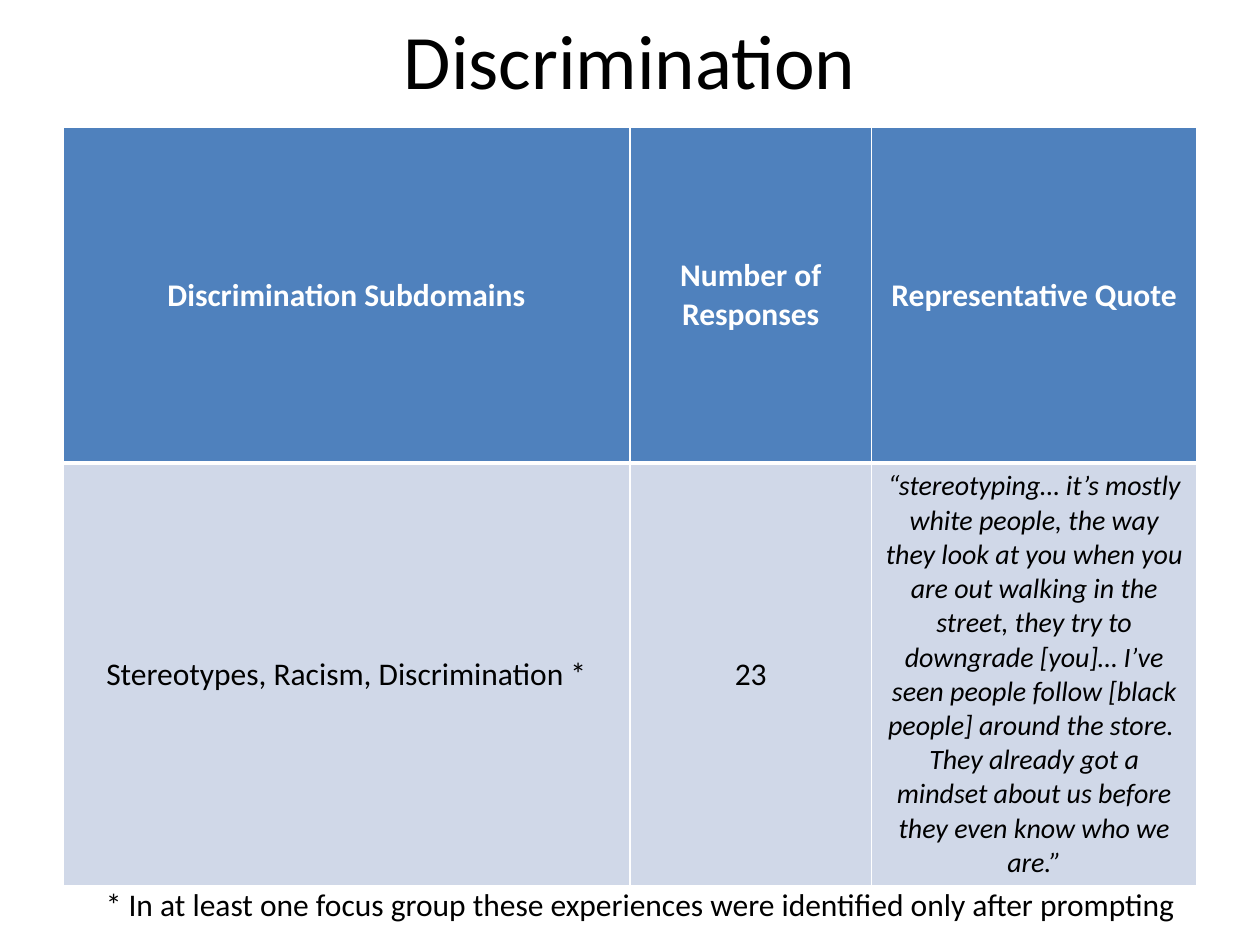
from dataclasses import dataclass

from lxml.etree import SubElement
from pptx import Presentation
from pptx.dml.color import RGBColor
from pptx.enum.text import MSO_ANCHOR as Anchor, MSO_AUTO_SIZE as AutoSize, PP_ALIGN as Align
from pptx.oxml.ns import qn
from pptx.util import Pt


@dataclass(frozen=True)
class Theme:
    """Colours, font and type sizes of the slide."""
    font: str = "Calibri"
    ink: str = "000000"
    paper: str = "FFFFFF"
    header: str = "4F81BD"
    band: str = "D0D8E8"
    title_size: float = 44
    body_size: float = 18
    quote_size: float = 16
    rule: float = 1
    header_rule: float = 3


THEME = Theme()
HEADINGS = ["Discrimination Subdomains", "Number of Responses", "Representative Quote"]
QUOTE = (
    "“stereotyping… it’s mostly white people, the way they look at you when you are out "
    "walking in the street, they try to downgrade [you]… I’ve seen people follow [black people] "
    "around the store.  They already got a mindset about us before they even know who we are.”"
)
RESPONSES = ["Stereotypes, Racism, Discrimination *", "23", QUOTE]
FOOTNOTE = "* In at least one focus group these experiences were identified only after prompting"


def write(frame, text, size=THEME.body_size, color=THEME.ink, align=Align.CENTER,
          bold=False, italic=False):
    """Put one formatted paragraph into a text frame."""
    frame.word_wrap = True
    paragraph = frame.paragraphs[0]
    paragraph.alignment = align
    run = paragraph.add_run()
    run.text = text
    font = run.font
    font.name, font.size, font.bold, font.italic = THEME.font, Pt(size), bold, italic
    font.color.rgb = RGBColor.from_string(color)


def place(shape, box):
    """Move and size a shape to a box given in points."""
    shape.left, shape.top, shape.width, shape.height = map(Pt, box)


def rule_cell(cell, top, bottom):
    """Draw the white rules around a table cell."""
    properties = cell._tc.get_or_add_tcPr()
    edges = {"lnL": THEME.rule, "lnR": THEME.rule, "lnT": top, "lnB": bottom}
    for position, (edge, weight) in enumerate(edges.items()):
        line = SubElement(properties, qn(f"a:{edge}"), w=str(Pt(weight)))
        fill = SubElement(line, qn("a:solidFill"))
        SubElement(fill, qn("a:srgbClr"), val=THEME.paper)
        properties.insert(position, line)


def fill_row(row, texts, formats, fill, top, bottom):
    """Write, colour and rule the cells of one table row."""
    for cell, text, text_format in zip(row.cells, texts, formats):
        write(cell.text_frame, text, **text_format)
        cell.vertical_anchor = Anchor.MIDDLE
        cell.fill.solid()
        cell.fill.fore_color.rgb = RGBColor.from_string(fill)
        rule_cell(cell, top, bottom)


def add_title(slide, box):
    """Place the slide title."""
    title = slide.shapes.title
    place(title, box)
    title.text_frame.vertical_anchor = Anchor.MIDDLE
    write(title.text_frame, "Discrimination", size=THEME.title_size)


def add_responses(slide, box):
    """Place the table of subdomains, response counts and quotes."""
    holder = slide.shapes.add_table(2, len(HEADINGS), *map(Pt, box))
    table = holder.table
    for column, width in zip(table.columns, (324, 138, 186)):
        column.width = Pt(width)
    for row, height in zip(table.rows, (191.5, 174.25)):
        row.height = Pt(height)
    place(holder, box)
    heading = dict(color=THEME.paper, bold=True)
    quote = dict(size=THEME.quote_size, italic=True)
    fill_row(table.rows[0], HEADINGS, [heading] * 3, THEME.header,
             THEME.rule, THEME.header_rule)
    fill_row(table.rows[1], RESPONSES, [{}, {}, quote], THEME.band,
             THEME.header_rule, THEME.rule)


def add_footnote(slide, box):
    """Place the note below the table."""
    footnote = slide.shapes.add_textbox(*map(Pt, box))
    write(footnote.text_frame, FOOTNOTE, align=Align.CENTER)
    footnote.text_frame.auto_size = AutoSize.SHAPE_TO_FIT_TEXT


def main():
    """Build and save the slide."""
    deck = Presentation()
    deck.slide_width, deck.slide_height = Pt(720), Pt(540)
    slide = deck.slides.add_slide(deck.slide_layouts[5])
    add_title(slide, (36, 1.5, 648, 64))
    add_responses(slide, (36, 73, 648, 429))
    add_footnote(slide, (48, 502, 636, 29))
    deck.save("out.pptx")


if __name__ == "__main__":
    main()
